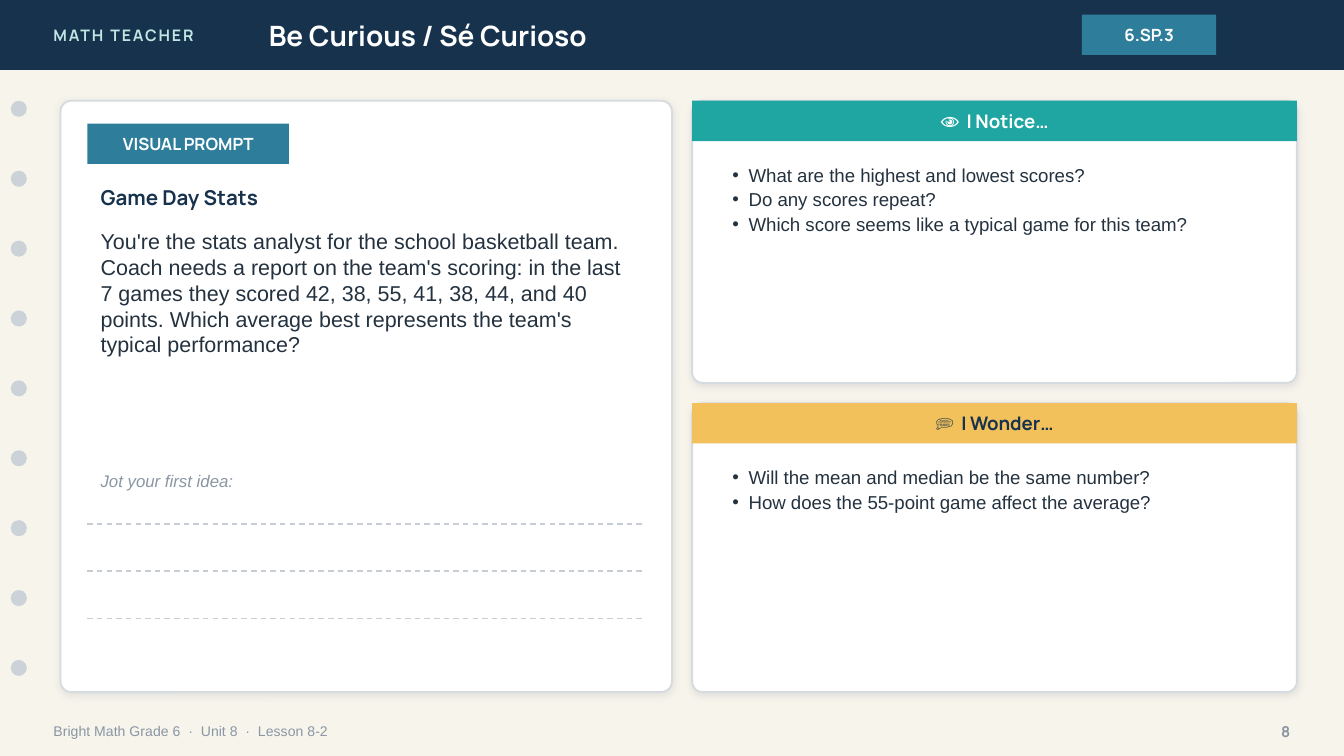
from lxml.etree import SubElement
from pptx import Presentation
from pptx.dml.color import RGBColor
from pptx.enum.dml import MSO_LINE
from pptx.enum.shapes import MSO_CONNECTOR, MSO_SHAPE
from pptx.enum.text import MSO_ANCHOR, MSO_AUTO_SIZE, PP_ALIGN
from pptx.oxml import parse_xml
from pptx.oxml.ns import nsdecls, qn
from pptx.util import Inches, Pt

NAVY, BLUE, TEAL, GOLD = "17324D", "2E7D9A", "1FA6A2", "F2C15B"
INK, GREY, WHITE = "24323F", "8A96A3", "FFFFFF"
HEAD, BODY = "Manrope", "Arial"
LEFT, CENTER, RIGHT = PP_ALIGN.LEFT, PP_ALIGN.CENTER, PP_ALIGN.RIGHT
MIDDLE, TOP = MSO_ANCHOR.MIDDLE, MSO_ANCHOR.TOP

SERIES = "MATH TEACHER"
TITLE = "Be Curious / Sé Curioso"
STANDARD = "6.SP.3"
FOOTER = "Bright Math Grade 6  ·  Unit 8  ·  Lesson 8-2"
PAGE_NUMBER = "8"
PROMPT_LABEL = "VISUAL PROMPT"
PROMPT_TITLE = "Game Day Stats"
PROMPT = (
    "You're the stats analyst for the school basketball team. Coach needs a report "
    "on the team's scoring: in the last 7 games they scored 42, 38, 55, 41, 38, 44, "
    "and 40 points. Which average best represents the team's typical performance?"
)
JOT = "Jot your first idea:"
PANELS = [
    (0.75, 2.1, "👁  I Notice…", TEAL, WHITE, [
        "What are the highest and lowest scores?",
        "Do any scores repeat?",
        "Which score seems like a typical game for this team?",
    ]),
    (3, 2.15, "💭  I Wonder…", GOLD, NAVY, [
        "Will the mean and median be the same number?",
        "How does the 55-point game affect the average?",
    ]),
]


def color(value):
    return RGBColor.from_string(value)


def inches(*lengths):
    return [Inches(length) for length in lengths]


def add_bullet(para):
    para.line_spacing = 1.1
    para.space_before = Pt(0)
    properties = para._p.get_or_add_pPr()
    properties.set("marL", str(Inches(0.12)))
    properties.set("indent", str(-Inches(0.12)))
    SubElement(properties, qn("a:buFont"), typeface=BODY)
    SubElement(properties, qn("a:buChar"), char="•")


def write(box, lines, size, font, ink, bold=False, italic=False,
          align=LEFT, anchor=MIDDLE, bullets=False):
    frame = box.text_frame
    frame.word_wrap = True
    frame.auto_size = MSO_AUTO_SIZE.NONE
    frame.vertical_anchor = anchor
    frame.text = "\n".join(lines)
    for para in frame.paragraphs:
        if bullets:
            add_bullet(para)
        para.alignment = align
        para.font.size, para.font.name = Pt(size), font
        para.font.bold, para.font.italic = bold, italic
        para.font.color.rgb = color(ink)


def add_text(page, at, text, *style, **options):
    box = page.shapes.add_textbox(*inches(*at))
    write(box, [text], *style, **options)
    return box


def add_block(page, kind, at, fill):
    shape = page.shapes.add_shape(kind, *inches(*at))
    shape.shadow.inherit = False
    shape.fill.solid()
    shape.fill.fore_color.rgb = color(fill)
    shape.line.fill.background()
    return shape


def add_label(page, at, text, fill, size=9, ink=WHITE):
    label = add_block(page, MSO_SHAPE.RECTANGLE, at, fill)
    write(label, [text], size, HEAD, ink, bold=True, align=CENTER)


def add_card(page, at):
    card = add_block(page, MSO_SHAPE.ROUNDED_RECTANGLE, at, WHITE)
    card.adjustments[0] = 0.08 / min(at[2:])
    card.line.color.rgb = color("D6DBDF")
    card.line.width = Pt(1)
    effects = card.element.spPr.find(qn("a:effectLst"))
    effects.append(parse_xml(
        f'<a:outerShdw {nsdecls("a")} blurRad="{Pt(4)}" dist="{Pt(1)}" dir="5400000" '
        'algn="bl" rotWithShape="0"><a:srgbClr val="1C2E42"><a:alpha val="10000"/>'
        '</a:srgbClr></a:outerShdw>'))


def place(holder, at):
    """Position a placeholder and bring it to the front."""
    holder.left, holder.top, holder.width, holder.height = inches(*at)
    holder.element.getparent().append(holder.element)


def add_header(page):
    add_block(page, MSO_SHAPE.RECTANGLE, (0, 0, 10, 0.52), NAVY)
    series = add_text(page, (0.3, 0, 2.4, 0.52), SERIES, 8.5, HEAD, "BFE6E2", bold=True)
    span = series.text_frame.paragraphs[0].runs[0]
    span._r.get_or_add_rPr().set("spc", "100")
    place(page.shapes.title, (1.9, 0, 5.6, 0.52))
    write(page.shapes.title, [TITLE], 15, HEAD, WHITE, bold=True)
    add_label(page, (8.05, 0.11, 1, 0.3), STANDARD, BLUE)


def add_prompt(page):
    add_card(page, (0.45, 0.75, 4.55, 4.4))
    add_label(page, (0.65, 0.92, 1.5, 0.3), PROMPT_LABEL, BLUE)
    add_text(page, (0.65, 1.32, 4.15, 0.3), PROMPT_TITLE, 11, HEAD, NAVY, bold=True)
    add_text(page, (0.65, 1.65, 4.15, 1.7), PROMPT, 11.5, BODY, INK, anchor=TOP)
    add_text(page, (0.65, 3.45, 4, 0.25), JOT, 9, BODY, GREY, italic=True)
    for row in range(3):
        y = 3.9 + 0.35 * row
        rule = page.shapes.add_connector(MSO_CONNECTOR.STRAIGHT, *inches(0.65, y, 4.8, y))
        rule.line.color.rgb = color("C7CDD2")
        rule.line.width = Pt(0.75)
        rule.line.dash_style = MSO_LINE.DASH
        SubElement(rule.element.spPr, qn("a:effectLst"))


def main():
    deck = Presentation()
    deck.slide_width, deck.slide_height = inches(10, 10 * 9 / 16)
    page = deck.slides.add_slide(deck.slide_layouts.get_by_name("Two Content"))
    page.background.fill.solid()
    page.background.fill.fore_color.rgb = color("F7F4EC")
    lists = list(page.placeholders)[1:]

    add_header(page)
    for hole in range(9):
        add_block(page, MSO_SHAPE.OVAL, (0.08, 0.75 + 0.52 * hole, 0.12, 0.12), "CBD3D9")
    add_text(page, (0.3, 5.3, 7, 0.28), FOOTER, 7.5, BODY, GREY)
    add_text(page, (9.2, 5.3, 0.5, 0.28), PAGE_NUMBER, 8, HEAD, GREY, bold=True, align=RIGHT)
    add_prompt(page)
    for holder, (top, height, heading, fill, ink, items) in zip(lists, PANELS):
        add_card(page, (5.15, top, 4.5, height))
        add_label(page, (5.15, top, 4.5, 0.3), heading, fill, 10, ink)
        place(holder, (5.35, top + 0.4, 4.1, height - 0.5))
        write(holder, items, 10, BODY, INK, anchor=TOP, bullets=True)

    deck.save("out.pptx")


if __name__ == "__main__":
    main()
